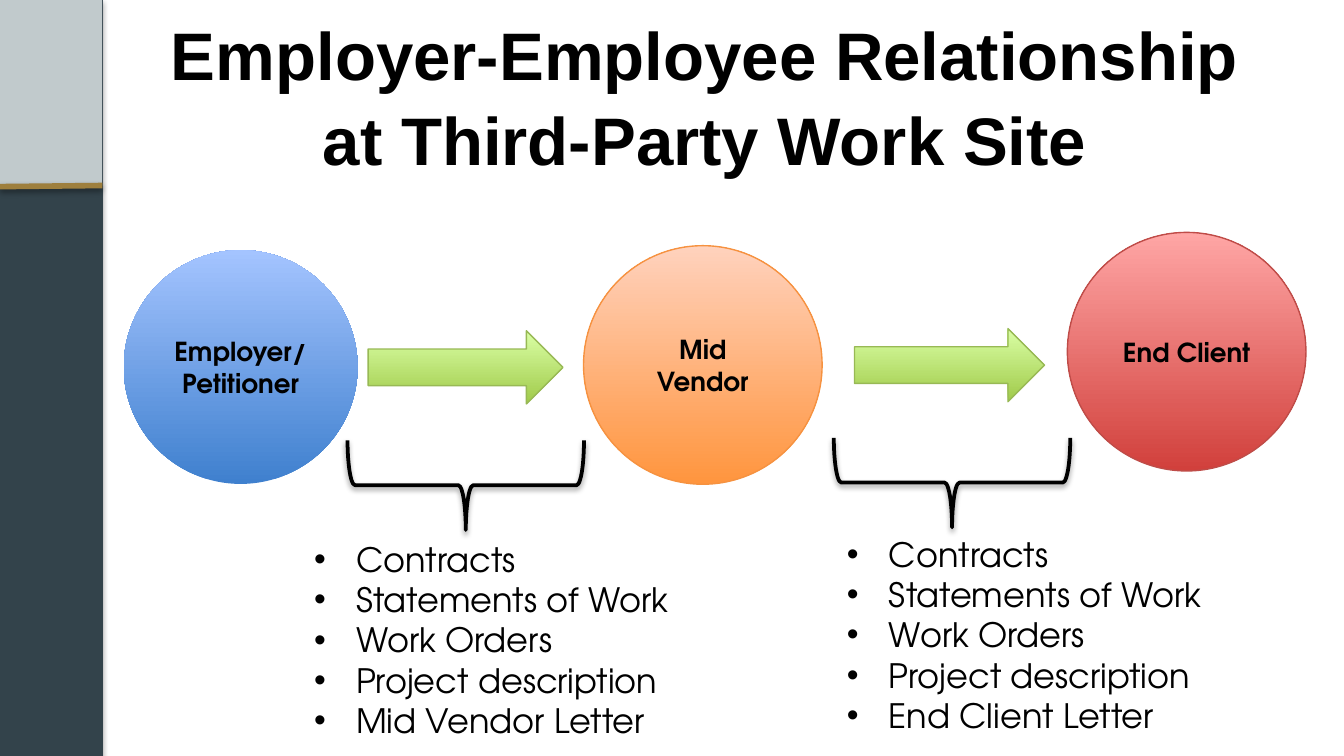
from dataclasses import dataclass

from lxml.etree import SubElement
from pptx import Presentation
from pptx.dml.color import RGBColor
from pptx.enum.shapes import MSO_CONNECTOR, MSO_SHAPE
from pptx.enum.text import MSO_ANCHOR, PP_ALIGN
from pptx.oxml.ns import qn
from pptx.util import Pt


@dataclass(frozen=True)
class Theme:
    title_font: str = "Arial"
    body_font: str = "TeX Gyre Adventor"
    title_size: float = 36
    label_size: float = 14
    list_size: float = 18
    ink: str = "000000"
    slate: str = "33434B"
    silver: str = "C1CACC"
    gold: str = "9E7F3D"
    blue: tuple = ("3F80CE", "A4C4FF", None)
    orange: tuple = ("FF953E", "FFD2BD", "F69240")
    red: tuple = ("D1403C", "FFA6A5", "BF4C48")
    green: tuple = ("A0CA4A", "DAFFA5", "98B955")


THEME = Theme()
DOCUMENTS = ["Contracts", "Statements of Work", "Work Orders", "Project description"]


def rgb(value):
    return RGBColor.from_string(value)


def set_line(sp, color, width=0.75):
    if color is None:
        sp.line.fill.background()
    else:
        sp.line.color.rgb = rgb(color)
        sp.line.width = Pt(width)


def add_shadow(sp, opacity=38, distance=1.6):
    sp_pr = sp._element.spPr
    for old in sp_pr.findall(qn("a:effectLst")):
        sp_pr.remove(old)
    effects = SubElement(sp_pr, qn("a:effectLst"))
    shadow = SubElement(effects, qn("a:outerShdw"), blurRad=str(Pt(3.1)),
                        dist=str(Pt(distance)), dir="5400000", rotWithShape="0")
    color = SubElement(shadow, qn("a:srgbClr"), val=THEME.ink)
    SubElement(color, qn("a:alpha"), val=str(opacity * 1000))


def format_text(tf, font, size, bold=False, align=PP_ALIGN.LEFT):
    tf.word_wrap = True
    for p in tf.paragraphs:
        p.alignment = align
        for r in p.runs:
            r.font.name = font
            r.font.size = Pt(size)
            r.font.bold = bold
            r.font.color.rgb = rgb(THEME.ink)


def add_preset(s, kind, x, y, w, h):
    sp = s.shapes.add_shape(kind, Pt(x), Pt(y), Pt(w), Pt(h))
    sp.shadow.inherit = False
    return sp


def add_panel(s, h, color, line=None):
    sp = add_preset(s, MSO_SHAPE.RECTANGLE, 0, 0, 54.8, h)
    sp.fill.solid()
    sp.fill.fore_color.rgb = rgb(color)
    set_line(sp, line)
    return sp


def add_sidebar(s):
    add_shadow(add_panel(s, 405, THEME.slate, THEME.slate), 35, 1.8)
    add_panel(s, 99.4, THEME.silver)
    rule = s.shapes.add_connector(MSO_CONNECTOR.STRAIGHT,
                                  Pt(0), Pt(100), Pt(54.8), Pt(99.4))
    set_line(rule, THEME.gold, 3)
    add_shadow(rule)


def add_title(s, text):
    sp = s.shapes.add_textbox(Pt(71.3), Pt(16.6), Pt(612.7), Pt(67.7))
    tf = sp.text_frame
    tf.text = text
    tf.vertical_anchor = MSO_ANCHOR.MIDDLE
    tf.paragraphs[0].line_spacing = 1.05
    format_text(tf, THEME.title_font, THEME.title_size, True, PP_ALIGN.CENTER)


def add_gradient_shape(s, kind, x, y, w, h, colors):
    bottom, top, line = colors
    sp = add_preset(s, kind, x, y, w, h)
    sp.fill.gradient()
    sp.fill.gradient_angle = 90
    for stop, color in zip(sp.fill.gradient_stops, (bottom, top)):
        stop.color.rgb = rgb(color)
    set_line(sp, line)
    return sp


def add_party(s, text, x, y, size, colors):
    sp = add_gradient_shape(s, MSO_SHAPE.OVAL, x, y, size, size, colors)
    tf = sp.text_frame
    tf.text = text
    tf.vertical_anchor = MSO_ANCHOR.MIDDLE
    format_text(tf, THEME.body_font, THEME.label_size, True, PP_ALIGN.CENTER)


def add_arrow(s, x, y, w):
    add_gradient_shape(s, MSO_SHAPE.RIGHT_ARROW, x, y, w, 39.2, THEME.green)


def add_brace(s, x, y):
    sp = add_preset(s, MSO_SHAPE.RIGHT_BRACE, x, y, 48, 126.7)
    sp.rotation = 90
    sp.fill.background()
    set_line(sp, THEME.ink, 2)
    add_shadow(sp)


def add_bullets(s, items, x, y):
    sp = s.shapes.add_textbox(Pt(x), Pt(y), Pt(216), Pt(116.6))
    tf = sp.text_frame
    tf.text = "\n".join(items)
    format_text(tf, THEME.body_font, THEME.list_size)
    for p in tf.paragraphs:
        p_pr = p._p.get_or_add_pPr()
        p_pr.set("marL", str(Pt(22.5)))
        p_pr.set("indent", str(-Pt(22.5)))
        SubElement(p_pr, qn("a:buFont"), typeface=THEME.title_font)
        SubElement(p_pr, qn("a:buChar"), char="•")


def main():
    prs = Presentation()
    prs.slide_width, prs.slide_height = Pt(720), Pt(405)
    s = prs.slides.add_slide(prs.slide_layouts[6])

    add_sidebar(s)
    add_title(s, "Employer-Employee Relationship at Third-Party Work Site")
    add_party(s, "Employer/Petitioner", 66.3, 134, 125.3, THEME.blue)
    add_party(s, "Mid Vendor", 312.6, 131.6, 127.8, THEME.orange)
    add_party(s, "End Client", 571.8, 124.5, 127.8, THEME.red)
    add_arrow(s, 457.8, 176, 101.8)
    add_arrow(s, 197.2, 177.2, 104.4)
    add_bullets(s, DOCUMENTS + ["Mid Vendor Letter"], 161.2, 285)
    add_bullets(s, DOCUMENTS + ["End Client Letter"], 446.6, 282.3)
    add_brace(s, 225.5, 196.6)
    add_brace(s, 486, 195.2)

    prs.save("out.pptx")


if __name__ == "__main__":
    main()
